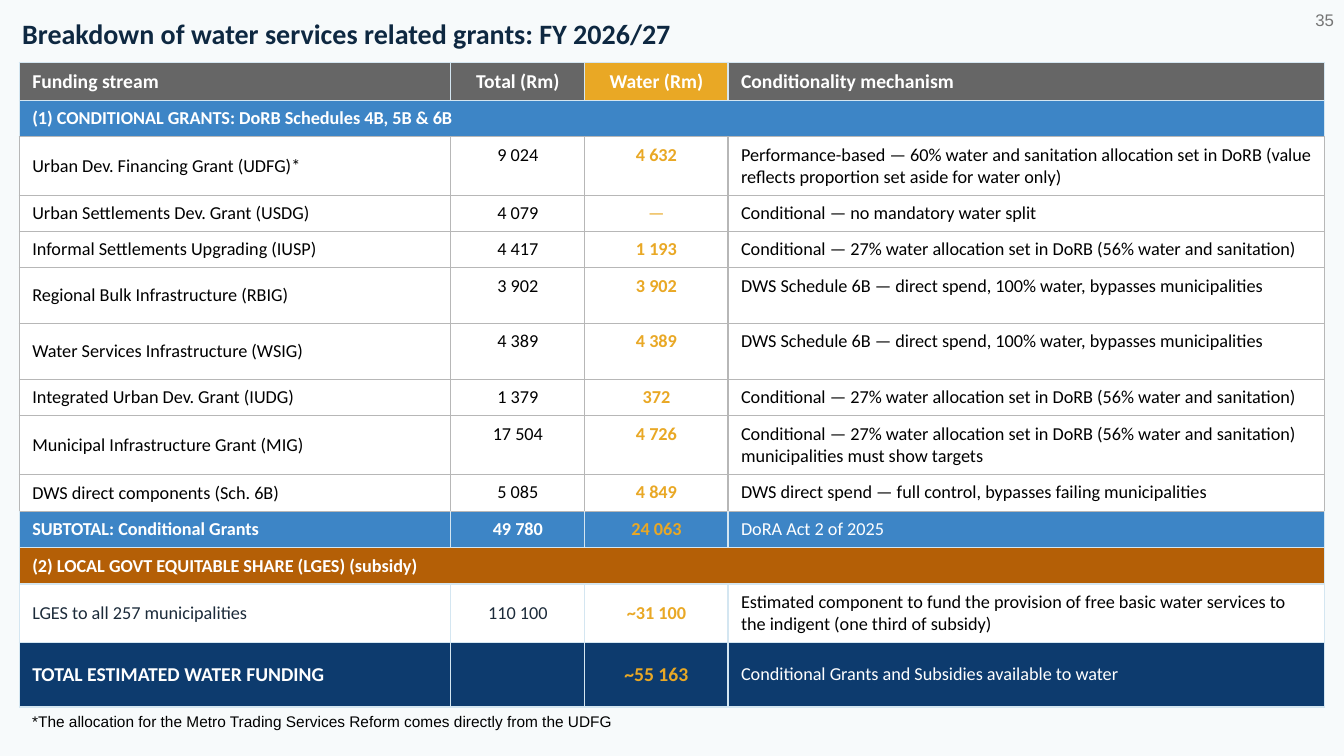
from dataclasses import dataclass
from typing import Any

import pptx
import pptx.dml.color
import pptx.enum.text
import pptx.oxml
import pptx.oxml.ns
import pptx.util
from lxml import etree

Anchor = pptx.enum.text.MSO_ANCHOR
Align = pptx.enum.text.PP_ALIGN
Inches = pptx.util.Inches
qn = pptx.oxml.ns.qn


# Theme: colours and type sizes
@dataclass(frozen=True)
class Theme:
    page: str = "F7FAFB"
    title: str = "0E2841"
    white: str = "FFFFFF"
    black: str = "000000"
    slate: str = "1C2B3A"
    number: str = "757575"
    amber: str = "E9A825"
    header: str = "666666"
    blue: str = "3D85C6"
    orange: str = "B45F06"
    navy: str = "0D3B6E"
    grey_edge: str = "B7B7B7"
    light_edge: str = "D4E6F1"
    table_font: str = "Calibri"
    note_font: str = "Arial"
    title_size: int = 20
    head_size: int = 14
    cell_size: int = 13
    number_size: int = 12
    note_size: int = 11


THEME = Theme()
SLIDE_WIDTH, SLIDE_HEIGHT = Inches(13.33), Inches(7.5)


@dataclass(frozen=True)
class Area:
    """Left, top, width and height in percent of the slide."""
    left: float
    top: float
    width: float
    height: float


@dataclass(frozen=True)
class Label:
    text: str
    area: Area
    size: int
    color: str
    font: str
    bold: bool = False
    align: Any = Align.LEFT
    anchor: Any = Anchor.TOP
    insets: tuple[float, float] = (0.1, 0.05)


@dataclass(frozen=True)
class RowStyle:
    """Look of one kind of row, column by column."""
    fills: tuple[str, ...]
    colors: tuple[str, ...]
    bold: tuple[bool, ...]
    sizes: tuple[int, ...] = (THEME.cell_size,) * 4
    middle: int = 0  # leading columns that are centred vertically
    edge: str = THEME.light_edge
    merged: bool = False


@dataclass(frozen=True)
class GrantRow:
    style: RowStyle
    height: float  # percent of slide height
    texts: tuple[str, ...]


T = THEME
FIGURES_BOLD = (True, True, True, False)
WATER_BOLD = (False, False, True, False)
ON_DARK = (T.white, T.white, T.amber, T.white)
HEADER = RowStyle((T.header, T.header, T.amber, T.header), (T.white,) * 4,
                  (True,) * 4, (T.head_size,) * 4)
GRANTS = RowStyle((T.blue,) * 4, (T.white,) * 4, (True,) * 4, merged=True)
SHARE = RowStyle((T.orange,) * 4, (T.white,) * 4, (True,) * 4, merged=True)
GRANT = RowStyle((T.white,) * 4, (T.black, T.black, T.amber, T.black),
                 WATER_BOLD, middle=1, edge=T.grey_edge)
SUBTOTAL = RowStyle((T.blue,) * 4, ON_DARK, FIGURES_BOLD)
SUBSIDY = RowStyle((T.white,) * 4, (T.slate, T.slate, T.amber, T.black),
                   WATER_BOLD, middle=3)
TOTAL = RowStyle((T.navy,) * 4, ON_DARK, FIGURES_BOLD,
                 (T.head_size,) * 3 + (T.cell_size,), middle=4)

# Slide content
TABLE_AREA = Area(1.43, 8.27, 97.15, 83.87)
COLUMNS = (32.11, 9.98, 10.65, 44.41)
LINE, WRAPPED, ROOMY = 4.6, 7.6, 7.4
SPLIT = "Conditional — 27% water allocation set in DoRB (56% water and sanitation)"
DIRECT = "DWS Schedule 6B — direct spend, 100% water, bypasses municipalities"
ROWS = (
    GrantRow(HEADER, 4.85, ("Funding stream", "Total (Rm)", "Water (Rm)",
                            "Conditionality mechanism")),
    GrantRow(GRANTS, LINE, ("(1) CONDITIONAL GRANTS: DoRB Schedules 4B, 5B & 6B", "", "", "")),
    GrantRow(GRANT, WRAPPED, (
        "Urban Dev. Financing Grant (UDFG)*", "9 024", "4 632",
        "Performance-based — 60% water and sanitation allocation set in DoRB "
        "(value reflects proportion set aside for water only)")),
    GrantRow(GRANT, LINE, ("Urban Settlements Dev. Grant (USDG)", "4 079", "—",
                           "Conditional — no mandatory water split")),
    GrantRow(GRANT, LINE, ("Informal Settlements Upgrading (IUSP)", "4 417", "1 193", SPLIT)),
    GrantRow(GRANT, ROOMY, ("Regional Bulk Infrastructure (RBIG)", "3 902", "3 902", DIRECT)),
    GrantRow(GRANT, ROOMY, ("Water Services Infrastructure (WSIG)", "4 389", "4 389", DIRECT)),
    GrantRow(GRANT, LINE, ("Integrated Urban Dev. Grant (IUDG)", "1 379", "372", SPLIT)),
    GrantRow(GRANT, WRAPPED, ("Municipal Infrastructure Grant (MIG)", "17 504", "4 726",
                              SPLIT + " municipalities must show targets")),
    GrantRow(GRANT, 4.93, ("DWS direct components (Sch. 6B)", "5 085", "4 849",
                           "DWS direct spend — full control, bypasses failing municipalities")),
    GrantRow(SUBTOTAL, LINE, ("SUBTOTAL: Conditional Grants", "49 780", "24 063",
                              "DoRA Act 2 of 2025")),
    GrantRow(SHARE, LINE, ("(2) LOCAL GOVT EQUITABLE SHARE (LGES) (subsidy)", "", "", "")),
    GrantRow(SUBSIDY, 7.73, (
        "LGES to all 257 municipalities", "110 100", "~31 100",
        "Estimated component to fund the provision of free basic water services "
        "to the indigent (one third of subsidy)")),
    GrantRow(TOTAL, 8.53, ("TOTAL ESTIMATED WATER FUNDING", "", "~55 163",
                           "Conditional Grants and Subsidies available to water")),
)
TITLE = Label("Breakdown of water services related grants: FY 2026/27",
              Area(1.65, 0, 78.32, 8.93), T.title_size, T.title, T.table_font,
              bold=True, anchor=Anchor.MIDDLE, insets=(0, 0))
NOTES = (
    Label("*The allocation for the Metro Trading Services Reform comes directly from the UDFG",
          Area(1.65, 93.6, 96.02, 3.87), T.note_size, T.black, T.note_font),
    Label("35", Area(77.49, 0, 22.51, 5.33), T.number_size, T.number, T.note_font,
          align=Align.RIGHT, anchor=Anchor.MIDDLE),
)


def across(percent: float) -> int:
    return round(SLIDE_WIDTH * percent / 100)


def down(percent: float) -> int:
    return round(SLIDE_HEIGHT * percent / 100)


def place(area: Area) -> tuple[int, int, int, int]:
    return across(area.left), down(area.top), across(area.width), down(area.height)


def apply(target: Any, values: dict[str, Any]) -> None:
    for name, value in values.items():
        setattr(target, name, value)


def write(para: Any, text: str, size: int, color: str, font: str, bold: bool) -> None:
    span = para.add_run()
    span.text = text
    apply(span.font, {"size": pptx.util.Pt(size), "name": font, "bold": bold})
    span.font.color.rgb = pptx.dml.color.RGBColor.from_string(color)


def fill_label(box: Any, label: Label) -> None:
    side, end = map(Inches, label.insets)
    apply(box, dict(zip(("left", "top", "width", "height"), place(label.area))))
    apply(box.text_frame, {
        "word_wrap": True, "auto_size": pptx.enum.text.MSO_AUTO_SIZE.NONE,
        "vertical_anchor": label.anchor, "margin_left": side, "margin_right": side,
        "margin_top": end, "margin_bottom": end})
    para = box.text_frame.paragraphs[0]
    para.alignment = label.align
    write(para, label.text, label.size, label.color, label.font, label.bold)


def draw_edges(cell: Any, edges: dict[str, str]) -> None:
    properties = cell._tc.get_or_add_tcPr()
    for side, color in edges.items():
        line = etree.SubElement(properties, qn(f"a:ln{side}"), w=str(pptx.util.Pt(1)))
        solid = etree.SubElement(line, qn("a:solidFill"))
        etree.SubElement(solid, qn("a:srgbClr"), val=color)


def fill_cell(cell: Any, row: GrantRow, column: int, edges: dict[str, str]) -> None:
    style, text = row.style, row.texts[column]
    side, end = Inches(0.13), Inches(0.07)
    apply(cell, {"margin_left": side, "margin_right": side, "margin_top": end,
                 "margin_bottom": end,
                 "vertical_anchor": Anchor.MIDDLE if column < style.middle else Anchor.TOP})
    draw_edges(cell, edges)
    cell.fill.solid()
    cell.fill.fore_color.rgb = pptx.dml.color.RGBColor.from_string(style.fills[column])
    para = cell.text_frame.paragraphs[0]
    para.alignment = Align.CENTER if column in (1, 2) else Align.LEFT
    if text:
        write(para, text, style.sizes[column], style.colors[column], THEME.table_font,
              style.bold[column] and text != "—")
    else:
        etree.SubElement(para._p, qn("a:endParaRPr"), sz=str(style.sizes[column] * 100))


def draw_table(page: Any) -> None:
    table = page.shapes.add_table(len(ROWS), len(COLUMNS), *place(TABLE_AREA)).table
    apply(table, {"first_row": False, "horz_banding": False})
    for column, width in zip(table.columns, COLUMNS):
        column.width = across(width)
    for index, row in enumerate(ROWS):
        table.rows[index].height = down(row.height)
        # Grey edges win where a grant row meets another kind of row
        own = row.style.edge
        above, below = (
            THEME.grey_edge if THEME.grey_edge in (own, other.style.edge) else own
            for other in (ROWS[max(index - 1, 0)], ROWS[min(index + 1, len(ROWS) - 1)]))
        for column in range(len(COLUMNS)):
            fill_cell(table.cell(index, column), row, column,
                      {"L": own, "R": own, "T": above, "B": below})
        if row.style.merged:
            table.cell(index, 0).merge(table.cell(index, len(COLUMNS) - 1))


def main() -> None:
    deck = pptx.Presentation()
    apply(deck, {"slide_width": SLIDE_WIDTH, "slide_height": SLIDE_HEIGHT})
    page = deck.slides.add_slide(deck.slide_layouts.get_by_name("Title Only"))
    page.background.fill.solid()
    page.background.fill.fore_color.rgb = pptx.dml.color.RGBColor.from_string(THEME.page)

    # Title, grants table, footnote and page number
    fill_label(page.shapes.title, TITLE)
    draw_table(page)
    for note in NOTES:
        fill_label(page.shapes.add_textbox(*place(note.area)), note)
    deck.save("out.pptx")


if __name__ == "__main__":
    main()
